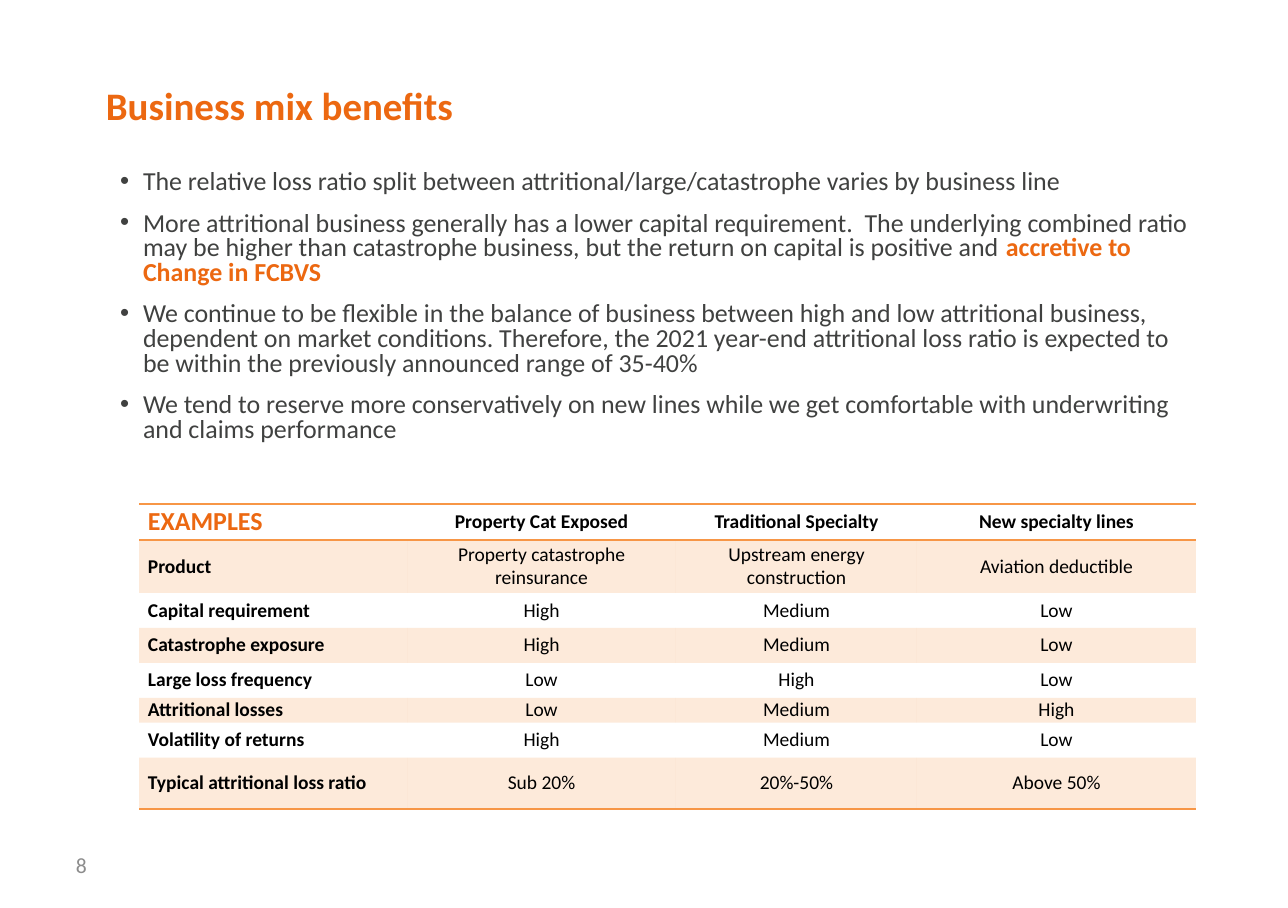
from lxml.etree import SubElement
from pptx import Presentation
from pptx.dml.color import RGBColor
from pptx.enum.text import MSO_ANCHOR as Anchor, MSO_AUTO_SIZE as AutoSize, PP_ALIGN as Align
from pptx.oxml import parse_xml
from pptx.oxml.ns import nsdecls, qn
from pptx.util import Pt

EMU_PER_PX = 5873
FONT = "Calibri"
ORANGE = RGBColor(0xEC, 0x68, 0x11)
AMBER = RGBColor(0xF7, 0x96, 0x46)
CHARCOAL = RGBColor(0x40, 0x41, 0x40)
GREY = RGBColor(0x8C, 0x8C, 0x8C)
BLACK = RGBColor(0, 0, 0)
NO_GRID_STYLE = "{2D5ABB26-0587-4C30-8999-92F81FD0307C}"

# Each point is a plain part and an emphasised ending.
POINTS = [
    ("The relative loss ratio split between attritional/large/catastrophe varies by business line", ""),
    ("More attritional business generally has a lower capital requirement.  The underlying combined "
     "ratio may be higher than catastrophe business, but the return on capital is positive and ",
     "accretive to Change in FCBVS"),
    ("We continue to be flexible in the balance of business between high and low attritional business, "
     "dependent on market conditions. Therefore, the 2021 year-end attritional loss ratio is expected "
     "to be within the previously announced range of 35-40%", ""),
    ("We tend to reserve more conservatively on new lines while we get comfortable with underwriting "
     "and claims performance", ""),
]

EXAMPLES = [
    ("EXAMPLES", "Property Cat Exposed", "Traditional Specialty", "New specialty lines"),
    ("Product", "Property catastrophe reinsurance", "Upstream energy construction", "Aviation deductible"),
    ("Capital requirement", "High", "Medium", "Low"),
    ("Catastrophe exposure", "High", "Medium", "Low"),
    ("Large loss frequency", "Low", "High", "Low"),
    ("Attritional losses", "Low", "Medium", "High"),
    ("Volatility of returns", "High", "Medium", "Low"),
    ("Typical attritional loss ratio", "Sub 20%", "20%-50%", "Above 50%"),
]
COLUMN_WIDTHS = [268, 269, 241, 279]
ROW_HEIGHTS = [36, 53, 35, 35, 35, 25, 35, 51]


def px(length):
    return length * EMU_PER_PX


def set_font(target, size, color, bold=False):
    font = target.font
    font.name, font.size, font.bold = FONT, Pt(size), bold
    font.color.rgb = color


def set_margins(holder, left, top, right, bottom):
    holder.margin_left, holder.margin_top = px(left), px(top)
    holder.margin_right, holder.margin_bottom = px(right), px(bottom)


class Deck:
    def __init__(self, width, height):
        self.prs = Presentation()
        self.prs.slide_width, self.prs.slide_height = px(width), px(height)
        self.slide = self.prs.slides.add_slide(self.prs.slide_layouts[1])

    def place(self, shape, left, top, width, height):
        shape.left, shape.top = px(left), px(top)
        shape.width, shape.height = px(width), px(height)
        frame = shape.text_frame
        frame.word_wrap, frame.auto_size = True, AutoSize.NONE
        return frame

    def title(self, text, *box):
        frame = self.place(self.slide.shapes.title, *box)
        frame.vertical_anchor = Anchor.TOP
        set_margins(frame, 106, 14, 12, 6)
        heading = frame.paragraphs[0]
        heading.text = text
        heading.alignment, heading.line_spacing = Align.LEFT, 0.9
        set_font(heading, 18, ORANGE, bold=True)

    def bullets(self, points, *box):
        frame = self.place(self.slide.placeholders[1], *box)
        set_margins(frame, 16, 8, 16, 8)
        for index, (plain, emphasis) in enumerate(points):
            point = frame.add_paragraph() if index else frame.paragraphs[0]
            properties = point._p.get_or_add_pPr()
            properties.set("marL", str(px(23)))
            properties.set("indent", str(px(-23)))
            point.line_spacing = 0.8
            point.space_before = Pt(7.5 if index else 0)
            set_font(point, 12, CHARCOAL)
            point.add_run().text = plain
            if emphasis:
                accent = point.add_run()
                accent.text = emphasis
                set_font(accent, 12, ORANGE, bold=True)

    def page_number(self, number, *box):
        frame = self.place(self.slide.shapes.add_textbox(0, 0, 0, 0), *box)
        frame.vertical_anchor = Anchor.MIDDLE
        set_margins(frame, 12, 6, 12, 6)
        frame.text = number
        set_font(frame.paragraphs[0], 10, GREY)

    def table(self, rows, left, top, widths, heights):
        table = self.slide.shapes.add_table(
            len(rows), len(widths), px(left), px(top), px(sum(widths)), px(sum(heights))).table
        table.first_row = table.horz_banding = False
        table._tbl.tblPr.find(qn("a:tableStyleId")).text = NO_GRID_STYLE
        for column, width in zip(table.columns, widths):
            column.width = px(width)
        for row, height in zip(table.rows, heights):
            row.height = px(height)
        last = len(rows) - 1
        for r, values in enumerate(rows):
            edges = {0: ("lnT", "lnB"), last: ("lnB",)}.get(r, ())
            for c, value in enumerate(values):
                cell = table.cell(r, c)
                self.cell_text(cell, value, is_header=r == 0, is_label=c == 0)
                self.cell_look(cell, tinted=r % 2 == 1, edges=edges)

    def cell_text(self, cell, value, is_header, is_label):
        cell.text = value
        cell.vertical_anchor = Anchor.MIDDLE
        set_margins(cell, 9, 0, 9, 0)
        entry = cell.text_frame.paragraphs[0]
        entry.alignment = Align.LEFT if is_label else Align.CENTER
        if is_header and is_label:
            set_font(entry, 12, ORANGE, bold=True)
        else:
            set_font(entry, 9, BLACK, bold=is_header or is_label)

    def cell_look(self, cell, tinted, edges):
        """Fill the cell with a light tint or nothing, and rule the given edges."""
        properties = cell._tc.get_or_add_tcPr()
        if tinted:
            cell.fill.solid()
            cell.fill.fore_color.rgb = AMBER
            tint = properties.find(qn("a:solidFill"))[0]
            SubElement(tint, qn("a:alpha")).set("val", "20000")
        else:
            cell.fill.background()
        for position, edge in enumerate(edges):
            properties.insert(position, parse_xml(
                f'<a:{edge} {nsdecls("a")} w="{Pt(1)}"><a:solidFill>'
                f'<a:srgbClr val="{AMBER}"/></a:solidFill></a:{edge}>'))


def main():
    deck = Deck(1288, 908)
    deck.title("Business mix benefits", 0, 73, 1288, 114)
    deck.bullets(POINTS, 104, 163, 1104, 341)
    deck.table(EXAMPLES, 139, 504, COLUMN_WIDTHS, ROW_HEIGHTS)
    deck.page_number("8", 64, 841, 300, 48)
    deck.prs.save("out.pptx")


if __name__ == "__main__":
    main()
